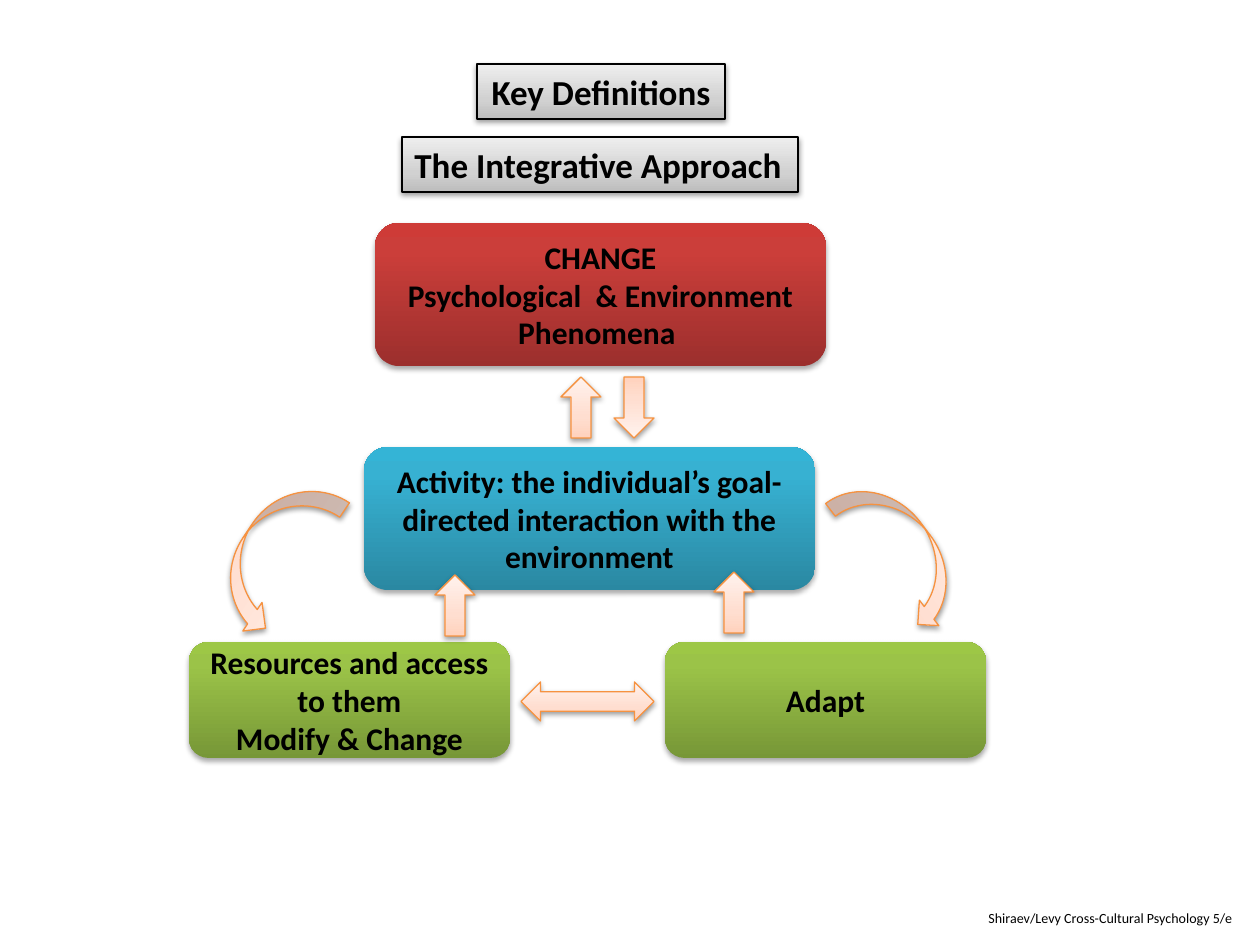
from copy import deepcopy

from lxml import etree
from pptx import Presentation
from pptx.dml.color import RGBColor
from pptx.enum.shapes import MSO_SHAPE as SHAPE
from pptx.enum.text import MSO_ANCHOR as ANCHOR, MSO_AUTO_SIZE as AUTO, PP_ALIGN as ALIGN
from pptx.oxml.ns import qn
from pptx.util import Pt

PX = 914400 / 126  # EMU per pixel
BLACK = RGBColor(0x00, 0x00, 0x00)
ORANGE = RGBColor(0xF6, 0x92, 0x40)
# three gradient colours, from bottom to top
GREYS = [RGBColor(0xBD, 0xBD, 0xBD), RGBColor(0xD1, 0xD1, 0xD1), RGBColor(0xEE, 0xEE, 0xEE)]
PEACHES = [RGBColor(0xFF, 0xD2, 0xBD), RGBColor(0xFF, 0xDE, 0xD0), RGBColor(0xFF, 0xF2, 0xED)]
REDS = [RGBColor(0x9C, 0x2F, 0x2D), RGBColor(0xCB, 0x3E, 0x3A), RGBColor(0xCE, 0x3B, 0x37)]
BLUES = [RGBColor(0x2A, 0x88, 0xA2), RGBColor(0x37, 0xB1, 0xD2), RGBColor(0x34, 0xB4, 0xD6)]
GREENS = [RGBColor(0x77, 0x97, 0x37), RGBColor(0x9B, 0xC3, 0x48), RGBColor(0x9D, 0xC7, 0x46)]

prs = Presentation()
prs.slide_width, prs.slide_height = round(1260 * PX), round(945 * PX)
s = prs.slides.add_slide(prs.slide_layouts[6])


def add_shape(kind, box, colors, line=None):
    """Add a shape with a vertical gradient and a soft shadow; unlined ones are glossier."""
    sp = s.shapes.add_shape(kind, *[round(v * PX) for v in box])
    sp.fill.gradient()
    sp.fill.gradient_angle = 90
    stops = sp._element.spPr.find(qn("a:gradFill")).find(qn("a:gsLst"))
    stops.append(deepcopy(stops[-1]))
    middle = 0.35 if line else 0.8
    for stop, position, color in zip(sp.fill.gradient_stops, (0, middle, 1), colors):
        stop.position = position
        stop.color.rgb = color
    if line:
        sp.line.color.rgb = line
        sp.line.width = Pt(0.75)
    else:
        sp.line.fill.background()
    sp.shadow.inherit = False
    effects = sp._element.spPr.find(qn("a:effectLst"))
    shadow = etree.SubElement(effects, qn("a:outerShdw"), blurRad="40000",
                              dist="20000" if line else "23000", dir="5400000", rotWithShape="0")
    color = etree.SubElement(shadow, qn("a:srgbClr"), val="000000")
    etree.SubElement(color, qn("a:alpha"), val="38000" if line else "35000")
    return sp


def write(sp, lines, size, align=ALIGN.CENTER, bold=True, anchor=ANCHOR.TOP, wrap=True):
    tf = sp.text_frame
    tf.word_wrap = wrap
    tf.vertical_anchor = anchor
    tf.auto_size = AUTO.NONE if anchor == ANCHOR.MIDDLE else AUTO.SHAPE_TO_FIT_TEXT
    for i, line in enumerate(lines):
        p = tf.add_paragraph() if i else tf.paragraphs[0]
        p.alignment = align
        r = p.add_run()
        r.text = line
        r.font.name = "Calibri"
        r.font.size = Pt(size)
        r.font.bold = bold
        r.font.color.rgb = BLACK


subtitle = add_shape(SHAPE.RECTANGLE, (402, 137, 396, 55), GREYS, BLACK)
write(subtitle, ["The Integrative Approach"], 20, ALIGN.LEFT, wrap=False)

stages = [
    ((189, 642, 321, 116), GREENS, ["Resources and access to them", "Modify & Change"]),
    ((665, 642, 321, 116), GREENS, ["Adapt"]),
    ((364, 447, 451, 143), BLUES,
     ["Activity: the individual’s goal-directed interaction with the environment"]),
    ((375, 223, 451, 143), REDS, ["CHANGE", "Psychological  & Environment Phenomena "]),
]
for box, colors, lines in stages:
    stage = add_shape(SHAPE.FLOWCHART_ALTERNATE_PROCESS, box, colors)
    write(stage, lines, 18, anchor=ANCHOR.MIDDLE)

arrows = [
    (SHAPE.LEFT_RIGHT_ARROW, (521, 682, 133, 39), 0),
    (SHAPE.UP_ARROW, (714, 572, 40, 61), 0),
    (SHAPE.UP_ARROW, (435, 575, 40, 61), 0),
    (SHAPE.UP_ARROW, (561, 377, 40, 61), 0),
    (SHAPE.CURVED_DOWN_ARROW, (818, 519, 168, 64), 52.7),
    (SHAPE.CURVED_UP_ARROW, (190, 519, 168, 69), 123.8),
    (SHAPE.UP_ARROW, (614, 377, 40, 61), 180),
]
for kind, box, rotation in arrows:
    arrow = add_shape(kind, box, PEACHES, ORANGE)
    arrow.rotation = rotation

title = add_shape(SHAPE.RECTANGLE, (477, 64, 248, 55), GREYS, BLACK)
write(title, ["Key Definitions"], 20)

credit = s.shapes.add_textbox(*[round(v * PX) for v in (976, 903, 274, 30)])
write(credit, ["Shiraev/Levy Cross-Cultural Psychology 5/e"], 8, ALIGN.LEFT, bold=False)

prs.save("out.pptx")
